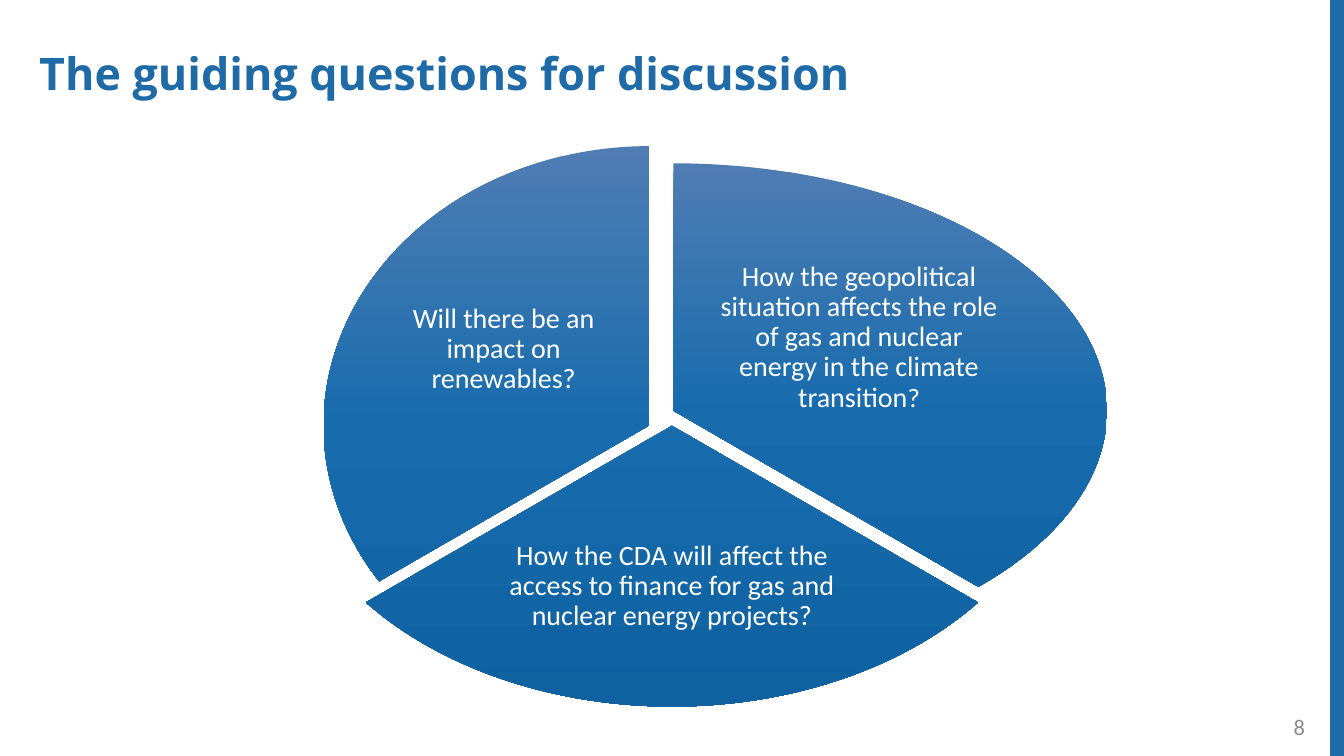
"""Build the slide with the guiding questions for discussion."""
from copy import deepcopy
from typing import NamedTuple

from lxml.etree import SubElement
from pptx import Presentation
from pptx.dml.color import RGBColor
from pptx.enum.shapes import MSO_CONNECTOR, MSO_SHAPE
from pptx.enum.text import MSO_ANCHOR as Anchor, PP_ALIGN as Align
from pptx.oxml.ns import qn
from pptx.slide import Slide
from pptx.util import Inches, Pt

COLORS = {
    "brand": "1F6BA7",
    "top": "4F7DB3",
    "middle": "186CAE",
    "bottom": "0F61A0",
    "white": "FFFFFF",
    "number": "8C8C8C",
}
GRADIENT = [(0, "top"), (0.5, "middle"), (1, "bottom")]
Box = tuple[float, float, float, float]


class Sector(NamedTuple):
    start: int
    end: int
    box: Box
    label_box: Box
    runs: list[tuple[str, int]]


SECTORS = [
    Sector(270, 30, (2.38, 1.62, 8.6, 4.91), (7.06, 2.53, 2.92, 1.64),
           [("How the geopolitical situation affects the role of gas and "
             "nuclear energy in the climate transition", 20), ("?", 19)]),
    Sector(30, 150, (2.76, 1.44, 7.81, 5.57), (4.9, 4.96, 3.53, 1.72),
           [("How the CDA will affect the access to finance for gas and "
             "nuclear energy projects?", 20)]),
    Sector(150, 270, (3.21, 1.45, 6.46, 5.54), (3.9, 2.54, 2.19, 1.85),
           [("Will there be an impact on renewables?", 20)]),
]


def rgb(name: str) -> RGBColor:
    return RGBColor.from_string(COLORS[name])


def add_text(slide: Slide, box: Box, runs: list[tuple[str, int]], *,
             color: str, font: str = "Calibri", bold: bool = False,
             align: Align = Align.LEFT, anchor: Anchor = Anchor.MIDDLE,
             spacing: float = 1.0, inset: float | None = None) -> None:
    tf = slide.shapes.add_textbox(*map(Inches, box)).text_frame
    tf.word_wrap = True
    tf.vertical_anchor = anchor
    if inset is not None:
        tf.margin_left = tf.margin_right = Inches(inset)
        tf.margin_top = tf.margin_bottom = Inches(inset)
    p = tf.paragraphs[0]
    p.alignment = align
    p.line_spacing = spacing
    for text, size in runs:
        r = p.add_run()
        r.text = text
        r.font.name = font
        r.font.size = Pt(size)
        r.font.bold = bold
        r.font.color.rgb = rgb(color)


def add_sector(slide: Slide, sector: Sector) -> None:
    sp = slide.shapes.add_shape(MSO_SHAPE.PIE, *map(Inches, sector.box))
    sp.shadow.inherit = False
    sp.adjustments[0] = sector.start * 0.6
    sp.adjustments[1] = sector.end * 0.6
    sp.line.fill.background()
    sp.fill.gradient()
    sp.fill.gradient_angle = 270
    stops = sp.element.spPr.find(qn("a:gradFill")).find(qn("a:gsLst"))
    stops.append(deepcopy(stops[0]))
    for stop, (position, color) in zip(sp.fill.gradient_stops, GRADIENT):
        stop.position = position
        stop.color.rgb = rgb(color)
    add_text(slide, sector.label_box, sector.runs, color="white",
             align=Align.CENTER, spacing=0.9, inset=0.03)


def add_edge(slide: Slide) -> None:
    x = Inches(13.27)
    edge = slide.shapes.add_connector(
        MSO_CONNECTOR.STRAIGHT, x, 0, x, Inches(7.5))
    edge.line.color.rgb = rgb("brand")
    edge.line.width = Pt(12)
    SubElement(edge._element.spPr, qn("a:effectLst"))


def main() -> None:
    prs = Presentation()
    prs.slide_width, prs.slide_height = Inches(13.33), Inches(7.5)
    slide = prs.slides.add_slide(prs.slide_layouts[6])
    add_edge(slide)
    for sector in SECTORS:
        add_sector(slide, sector)
    add_text(slide, (0.29, 0.46, 11.96, 0.58),
             [("The guiding questions for discussion", 32)], color="brand",
             font="Open Sans", bold=True, anchor=Anchor.TOP, spacing=0.9)
    add_text(slide, (10.04, 7.01, 3, 0.4), [("8", 16)], color="number",
             align=Align.RIGHT)
    prs.save("out.pptx")


if __name__ == "__main__":
    main()
